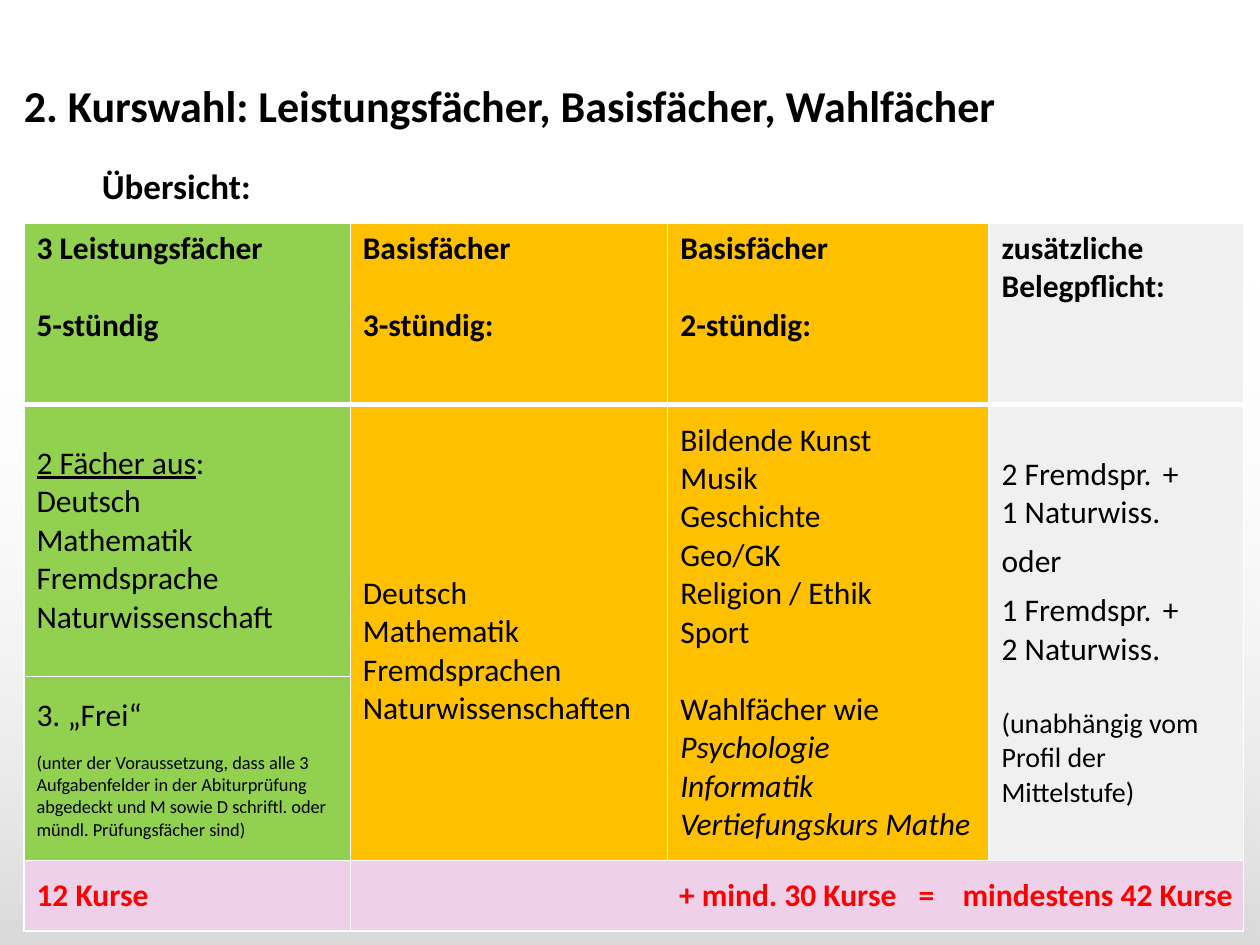
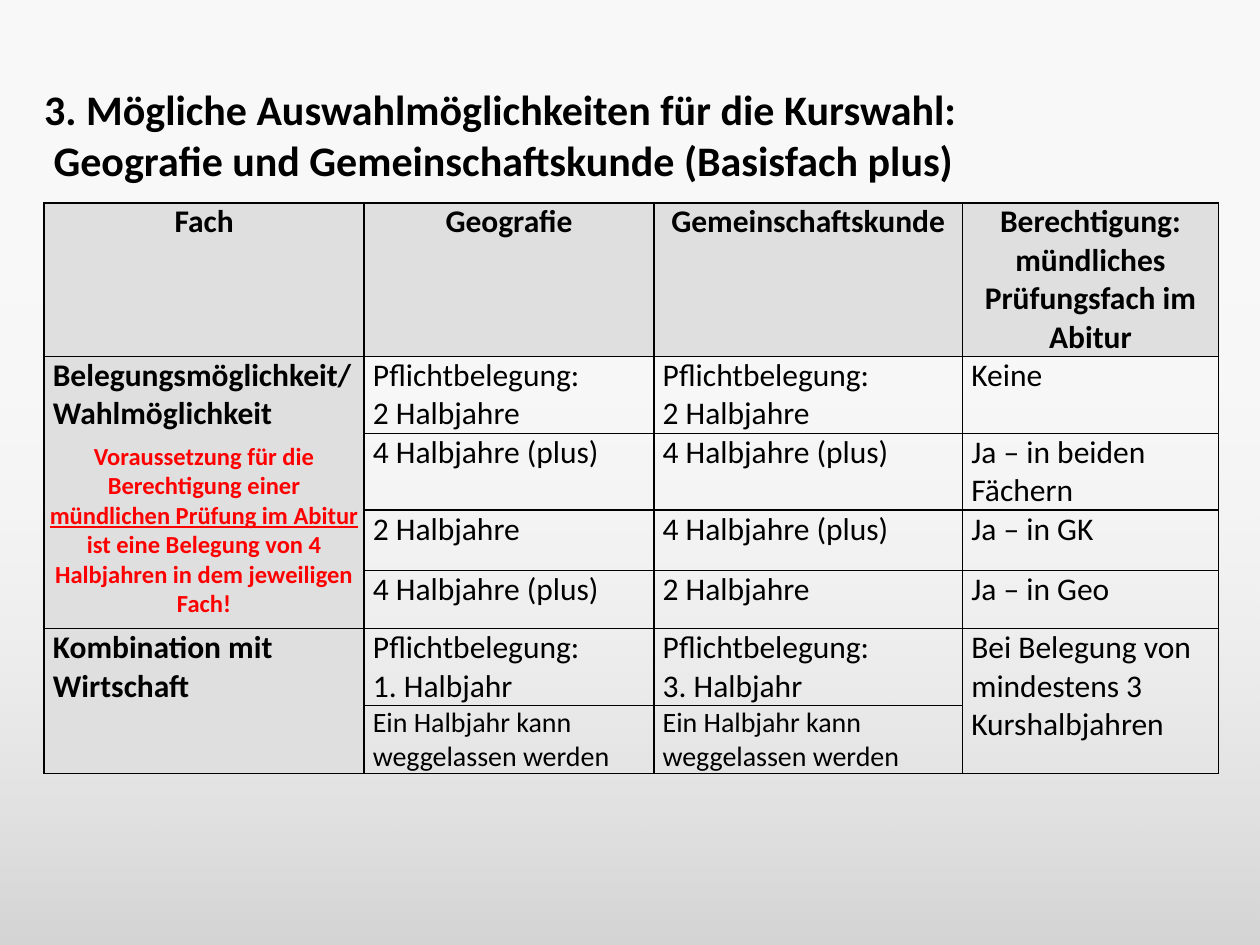
from lxml import etree
from pptx import Presentation, util as u
from pptx.dml.color import RGBColor
from pptx.enum import shapes, text
from pptx.oxml import ns

WIDE, HIGH = 10, 7.5
FONT = "Calibri"
BLACK, WHITE, RED = "000000", "FFFFFF", "FF0000"
GREEN, AMBER, PALE, PINK, GREY = "92D050", "FFC000", "F0F0F0", "EED0E8", "DFDFDF"
LINE = 22  # points that one 18-point line takes
ALIGN = {"l": text.PP_ALIGN.LEFT, "c": text.PP_ALIGN.CENTER}
ANCHOR = {"t": text.MSO_ANCHOR.TOP, "m": text.MSO_ANCHOR.MIDDLE}

# A paragraph is a string or (string, format); words between bars are underlined.
# A cell is (row, column, row span, column span, paragraphs, format).
GAP, SLANT, SMALL = dict(before=LINE), dict(italic=True), dict(size=16)
PLUS = dict(tabs=[1.28])
HEAD = dict(bold=True, anchor="t")
SUM = dict(bold=True, color=RED, fill=PINK)

COURSES = dict(
    at=(0.19, 1.77), cols=[2.59, 2.52, 2.55, 2.02], rows=[1.44, 2.16, 1.46, 0.56],
    edge=WHITE, rule=3, pad=(0.1, 0.05, 0.1, 0.05), base=dict(anchor="m"),
    cells=[
        (0, 0, 1, 1, ["3 Leistungsfächer", ("5-stündig", GAP)], dict(HEAD, fill=GREEN)),
        (0, 1, 1, 1, ["Basisfächer", ("3-stündig:", GAP)], dict(HEAD, fill=AMBER)),
        (0, 2, 1, 1, ["Basisfächer", ("2-stündig:", GAP)], dict(HEAD, fill=AMBER)),
        (0, 3, 1, 1, ["zusätzliche", "Belegpflicht:"], dict(HEAD, fill=PALE)),
        (1, 0, 1, 1, ["|2 Fächer aus|:", "Deutsch", "Mathematik", "Fremdsprache",
                      "Naturwissenschaft"], dict(fill=GREEN)),
        (1, 1, 2, 1, ["Deutsch", "Mathematik", "Fremdsprachen", "Naturwissenschaften"],
         dict(fill=AMBER, pad=(0.1, 0.35, 0.1, 0.05))),
        (1, 2, 2, 1, ["Bildende Kunst", "Musik", "Geschichte", "Geo/GK",
                      "Religion / Ethik", "Sport", ("Wahlfächer wie", GAP),
                      ("Psychologie", SLANT), ("Informatik", SLANT),
                      ("Vertiefungskurs Mathe", SLANT)], dict(fill=AMBER)),
        (1, 3, 2, 1, [("2 Fremdspr.\t+", PLUS), "1 Naturwiss.",
                      ("oder", dict(before=6, after=6)),
                      ("1 Fremdspr.\t+", PLUS), "2 Naturwiss.",
                      ("(unabhängig vom Profil der Mittelstufe)", dict(GAP, size=16))],
         dict(fill=PALE)),
        (2, 0, 1, 1, ["3. „Frei“",
                      ("(unter der Voraussetzung, dass alle 3 Aufgabenfelder in der "
                       "Abiturprüfung abgedeckt und M sowie D schriftl. oder mündl. "
                       "Prüfungsfächer sind)", dict(size=10.5, before=10))],
         dict(fill=GREEN)),
        (3, 0, 1, 1, ["12 Kurse"], SUM),
        (3, 1, 1, 3, [("+ mind. 30 Kurse\t=\tmindestens 42 Kurse", dict(tabs=[1.9, 2.25]))],
         dict(SUM, pad=(2.61, 0.05, 0.02, 0.05))),
    ])

TOP = dict(bold=True, align="c", fill=GREY)
SIDE = dict(bold=True, fill=GREY)
MUST, FOUR, TWO = "Pflichtbelegung:", "4 Halbjahre (plus)", "2 Halbjahre"
SKIP = "Ein Halbjahr kann weggelassen werden"
heads = ["Fach", "Geografie", "Gemeinschaftskunde",
         "Berechtigung: mündliches Prüfungsfach im Abitur"]
terms = [  # from row 1, column 1 on
    [[MUST, TWO], [MUST, TWO], ["Keine"]],
    [[FOUR], [FOUR], ["Ja – in beiden Fächern"]],
    [[TWO], [FOUR], ["Ja – in GK"]],
    [[FOUR], [TWO], ["Ja – in Geo"]],
    [[MUST, "1. Halbjahr"], [MUST, "3. Halbjahr"]],
    [[(SKIP, SMALL)], [(SKIP, SMALL)]],
]
OPTIONS = dict(
    at=(0.35, 1.61), cols=[2.54, 2.3, 2.45, 2.03],
    rows=[1.22, 0.61, 0.61, 0.48, 0.46, 0.61, 0.54],
    edge=BLACK, rule=1, pad=(0.07, 0, 0.07, 0), base=dict(anchor="t"),
    cells=[(0, c, 1, 1, [head], TOP) for c, head in enumerate(heads)]
    + [(r, c, 1, 1, paras, {}) for r, row in enumerate(terms, 1)
       for c, paras in enumerate(row, 1)]
    + [(1, 0, 4, 1, ["Belegungsmöglichkeit/", "Wahlmöglichkeit"], SIDE),
       (5, 0, 2, 1, ["Kombination mit Wirtschaft"], SIDE),
       (5, 3, 2, 1, ["Bei Belegung von mindestens 3 Kurshalbjahren"], {})])

SLIDES = [
    dict(back=WHITE, table=COURSES, boxes=[
        (0.19, 0.52, 8.5, 0.63, ["2. Kurswahl: Leistungsfächer, Basisfächer, Wahlfächer"],
         dict(size=25.2, anchor="m", pad=(0, 0, 0, 0))),
        (0.71, 1.26, 6.31, 0.44, ["Übersicht:"], dict(size=20))]),
    dict(back="F8F8F8", table=OPTIONS, boxes=[
        (0.35, 0.47, 9.29, 1.19, ["3. Mögliche Auswahlmöglichkeiten für die Kurswahl:\v"
                                  " Geografie und Gemeinschaftskunde (Basisfach plus)"],
         dict(size=24, anchor="m", pad=(0, 0, 0, 0))),
        (0.27, 3.45, 2.7, 1.52, ["Voraussetzung für die Berechtigung einer "
                                 "|mündlichen Prüfung im Abitur| ist eine Belegung von 4 "
                                 "Halbjahren in dem jeweiligen Fach!"],
         dict(size=14, color=RED, align="c"))]),
]


def tint(color):
    return RGBColor.from_string(color)


def sub(node, tag, **attrs):
    return etree.SubElement(node, ns.qn(tag), attrs)


def write(frame, paras, size=18, color=BLACK, bold=False, italic=False,
          align="l", before=0, after=0, tabs=()):
    """Fill a text frame; a paragraph's own format overrides the shared one."""
    base = dict(size=size, color=color, bold=bold, italic=italic,
                align=align, before=before, after=after, tabs=tabs)
    for i, item in enumerate(paras):
        words, own = (item, {}) if isinstance(item, str) else item
        look = {**base, **own}
        para = frame.paragraphs[0] if i == 0 else frame.add_paragraph()
        para.alignment = ALIGN[look["align"]]
        para.space_before, para.space_after = u.Pt(look["before"]), u.Pt(look["after"])
        if look["tabs"]:
            stops = sub(para._p.get_or_add_pPr(), "a:tabLst")
            for stop in look["tabs"]:
                sub(stops, "a:tab", pos=str(u.Inches(stop)), algn="l")
        for j, part in enumerate(words.split("|")):
            for k, line in enumerate(part.split("\v")):
                if k:
                    para.add_line_break()
                if not line:
                    continue
                run = para.add_run()
                run.text = line
                font = run.font
                font.name, font.size = FONT, u.Pt(look["size"])
                font.bold, font.italic = look["bold"], look["italic"]
                font.underline = j % 2 == 1
                font.color.rgb = tint(look["color"])


def inset(item, pad):
    (item.margin_left, item.margin_top,
     item.margin_right, item.margin_bottom) = map(u.Inches, pad)


def shade(slide, color):
    """Paint the background and the soft grey rise at its foot."""
    slide.background.fill.solid()
    slide.background.fill.fore_color.rgb = tint(color)
    top = 2.21
    band = slide.shapes.add_shape(shapes.MSO_SHAPE.RECTANGLE, 0, u.Inches(top),
                                  u.Inches(WIDE), u.Inches(HIGH - top))
    band.shadow.inherit = False
    band.line.fill.background()
    band.fill.gradient()
    band.fill.gradient_angle = 90
    for stop, place, tone, alpha in zip(band.fill.gradient_stops, (0, 1),
                                        (BLACK, WHITE), (15000, 0)):
        stop.position = place
        stop.color.rgb = tint(tone)
    tones = band._element.spPr.iter(ns.qn("a:srgbClr"))
    for tone, alpha in zip(list(tones), (15000, 0)):
        sub(tone, "a:alpha", val=str(alpha))


def add_box(slide, x, y, w, h, paras, look):
    look = dict(look)
    frame = slide.shapes.add_textbox(*map(u.Inches, (x, y, w, h))).text_frame
    frame.word_wrap = True
    frame.vertical_anchor = ANCHOR[look.pop("anchor", "t")]
    inset(frame, look.pop("pad", (0.1, 0.05, 0.1, 0.05)))
    write(frame, paras, bold=True, **look)


def frame_cell(cell, color, top, foot):
    props = cell._tc.get_or_add_tcPr()
    for i, (side, width) in enumerate(zip("LRTB", (1, 1, top, foot))):
        line = etree.Element(ns.qn("a:ln" + side), w=str(u.Pt(width)))
        sub(sub(line, "a:solidFill"), "a:srgbClr", val=color)
        props.insert(i, line)


def add_grid(slide, at, cols, rows, edge, rule, pad, base, cells):
    size = (sum(cols), sum(rows))
    grid = slide.shapes.add_table(len(rows), len(cols),
                                  *map(u.Inches, at + size)).table
    grid.first_row = grid.horz_banding = False
    for parts, sizes, side in ((grid.columns, cols, "width"), (grid.rows, rows, "height")):
        for part, length in zip(parts, sizes):
            setattr(part, side, u.Inches(length))
    for r, c, down, over, paras, own in cells:
        look = {"pad": pad, "fill": None, **base, **own}
        fill = look.pop("fill")
        cell = grid.cell(r, c)
        if down * over > 1:
            cell.merge(grid.cell(r + down - 1, c + over - 1))
        inset(cell, look.pop("pad"))
        cell.vertical_anchor = ANCHOR[look.pop("anchor")]
        write(cell.text_frame, paras, **look)
        for i in range(r, r + down):
            for j in range(c, c + over):
                part = grid.cell(i, j)
                if fill:
                    part.fill.solid()
                    part.fill.fore_color.rgb = tint(fill)
                else:
                    part.fill.background()
                frame_cell(part, edge, rule if i == 1 else 1, rule if i == 0 else 1)


def main():
    deck = Presentation()
    deck.slide_width, deck.slide_height = u.Inches(WIDE), u.Inches(HIGH)
    for page in SLIDES:
        slide = deck.slides.add_slide(deck.slide_layouts[6])
        shade(slide, page["back"])
        add_grid(slide, **page["table"])
        for box in page["boxes"]:
            add_box(slide, *box)
    deck.save("out.pptx")


if __name__ == "__main__":
    main()
